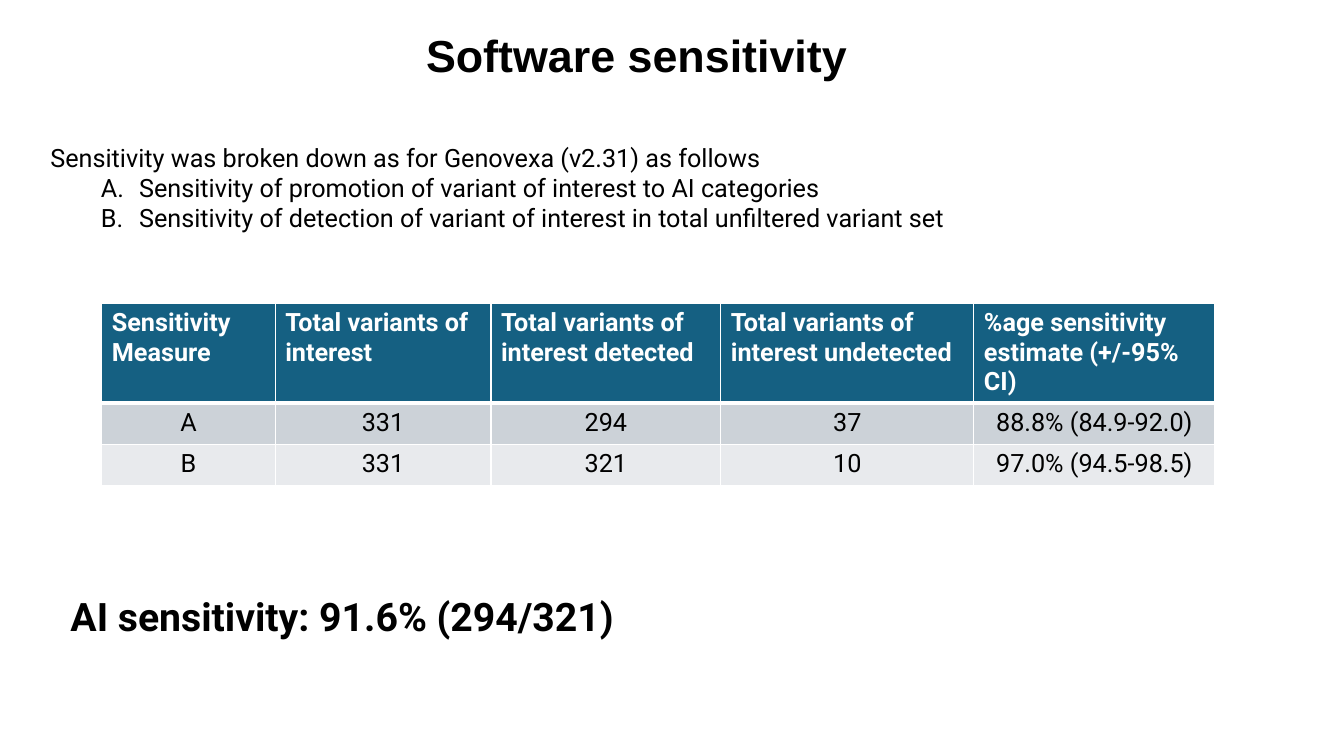
"""Build the software sensitivity slide."""
from dataclasses import dataclass

from lxml import etree
from pptx import Presentation
from pptx.dml.color import RGBColor
from pptx.enum.text import MSO_ANCHOR, MSO_AUTO_SIZE, PP_ALIGN
from pptx.oxml.ns import qn
from pptx.util import Inches, Pt

LEFT, CENTER = PP_ALIGN.LEFT, PP_ALIGN.CENTER
TOP, NO_FIT = MSO_ANCHOR.TOP, MSO_AUTO_SIZE.NONE
BLACK = RGBColor(0x00, 0x00, 0x00)
WHITE = RGBColor(0xFF, 0xFF, 0xFF)
TEAL = RGBColor(0x15, 0x60, 0x82)
BAND_FILLS = (RGBColor(0xCC, 0xD2, 0xD8), RGBColor(0xE8, 0xEA, 0xED))
HEADER_HEIGHT, ROW_HEIGHT = 0.99, 0.41


@dataclass
class Column:
    heading: str
    width: float
    values: tuple[str, str]


COLUMNS = (
    Column("Sensitivity Measure", 1.72, ("A", "B")),
    Column("Total variants of interest", 2.14, ("331", "331")),
    Column("Total variants of interest detected", 2.28, ("294", "321")),
    Column("Total variants of interest undetected", 2.51, ("37", "10")),
    Column("%age sensitivity estimate (+/-95% CI)", 2.39,
           ("88.8% (84.9-92.0)", "97.0% (94.5-98.5)")),
)
INTRO = "Sensitivity was broken down as for Genovexa (v2.31) as follows"
MEASURES = (
    "Sensitivity of promotion of variant of interest to AI categories",
    "Sensitivity of detection of variant of interest in total unfiltered variant set",
)


def place(sp, left: float, top: float, width: float, height: float) -> None:
    sp.left, sp.top = Inches(left), Inches(top)
    sp.width, sp.height = Inches(width), Inches(height)
    sp.text_frame.word_wrap = True
    sp.text_frame.auto_size = NO_FIT
    sp.text_frame.vertical_anchor = TOP


def style(p, size: float, color: RGBColor = BLACK, bold: bool = False,
          font: str = "Roboto", align: PP_ALIGN = LEFT) -> None:
    p.alignment = align
    p.space_before = Pt(0)
    p.font.name, p.font.size = font, Pt(size)
    p.font.bold, p.font.color.rgb = bold, color


def set_bullet(p, numbered: bool) -> None:
    pPr = p._p.get_or_add_pPr()
    pPr.set("marL", str(Inches(0.88 if numbered else 0)))
    pPr.set("indent", str(Inches(-0.38 if numbered else 0)))
    if numbered:
        font = etree.Element(qn("a:buFont"), typeface="+mj-lt")
        bullet = etree.Element(qn("a:buAutoNum"), type="alphaUcPeriod")
        marks = (font, bullet)
    else:
        marks = (etree.Element(qn("a:buNone")),)
    defaults = pPr.find(qn("a:defRPr"))
    for mark in marks:
        defaults.addprevious(mark)


def add_border(cell, side: str, width: float) -> None:
    tcPr = cell._tc.get_or_add_tcPr()
    ln = etree.SubElement(tcPr, qn(f"a:{side}"), w=str(Pt(width)))
    fill = etree.SubElement(ln, qn("a:solidFill"))
    etree.SubElement(fill, qn("a:srgbClr"), val=str(WHITE))


def fill_cell(cell, text: str, row: int) -> None:
    header = row == 0
    borders = {"lnL": 1, "lnR": 1, "lnT": 3 if row == 1 else 1, "lnB": 3 if header else 1}
    for side, width in borders.items():
        add_border(cell, side, width)
    cell.fill.solid()
    cell.fill.fore_color.rgb = TEAL if header else BAND_FILLS[row - 1]
    cell.text = text
    style(cell.text_frame.paragraphs[0], 18, WHITE if header else BLACK,
          bold=header, align=LEFT if header else CENTER)


def add_sensitivity_table(s) -> None:
    heights = (HEADER_HEIGHT, ROW_HEIGHT, ROW_HEIGHT)
    width = sum(column.width for column in COLUMNS)
    table = s.shapes.add_table(
        len(heights), len(COLUMNS), Inches(1.01), Inches(3.01),
        Inches(width), Inches(sum(heights))).table
    for row, height in enumerate(heights):
        table.rows[row].height = Inches(height)
    for col, column in enumerate(COLUMNS):
        table.columns[col].width = Inches(column.width)
        for row, text in enumerate((column.heading, *column.values)):
            fill_cell(table.cell(row, col), text, row)


def main() -> None:
    prs = Presentation()
    prs.slide_width, prs.slide_height = Inches(13.33), Inches(7.5)
    s = prs.slides.add_slide(prs.slide_layouts[1])

    title, body = s.shapes.title, s.placeholders[1]
    place(title, 1.43, 0.22, 9.77, 0.64)
    title.text_frame.text = "Software sensitivity"
    style(title.text_frame.paragraphs[0], 32, bold=True, font="Arial", align=CENTER)

    place(body, 0.4, 1.36, 12.02, 1.01)
    body.text_frame.text = "\n".join((INTRO, *MEASURES))
    for i, p in enumerate(body.text_frame.paragraphs):
        p.level = min(i, 1)
        style(p, 18)
        set_bullet(p, numbered=i > 0)

    add_sensitivity_table(s)

    summary = s.shapes.add_textbox(0, 0, 0, 0)
    place(summary, 0.6, 5.83, 10.18, 0.57)
    summary.text_frame.text = "AI sensitivity: 91.6% (294/321)"
    style(summary.text_frame.paragraphs[0], 28, bold=True)

    prs.save("out.pptx")


if __name__ == "__main__":
    main()
